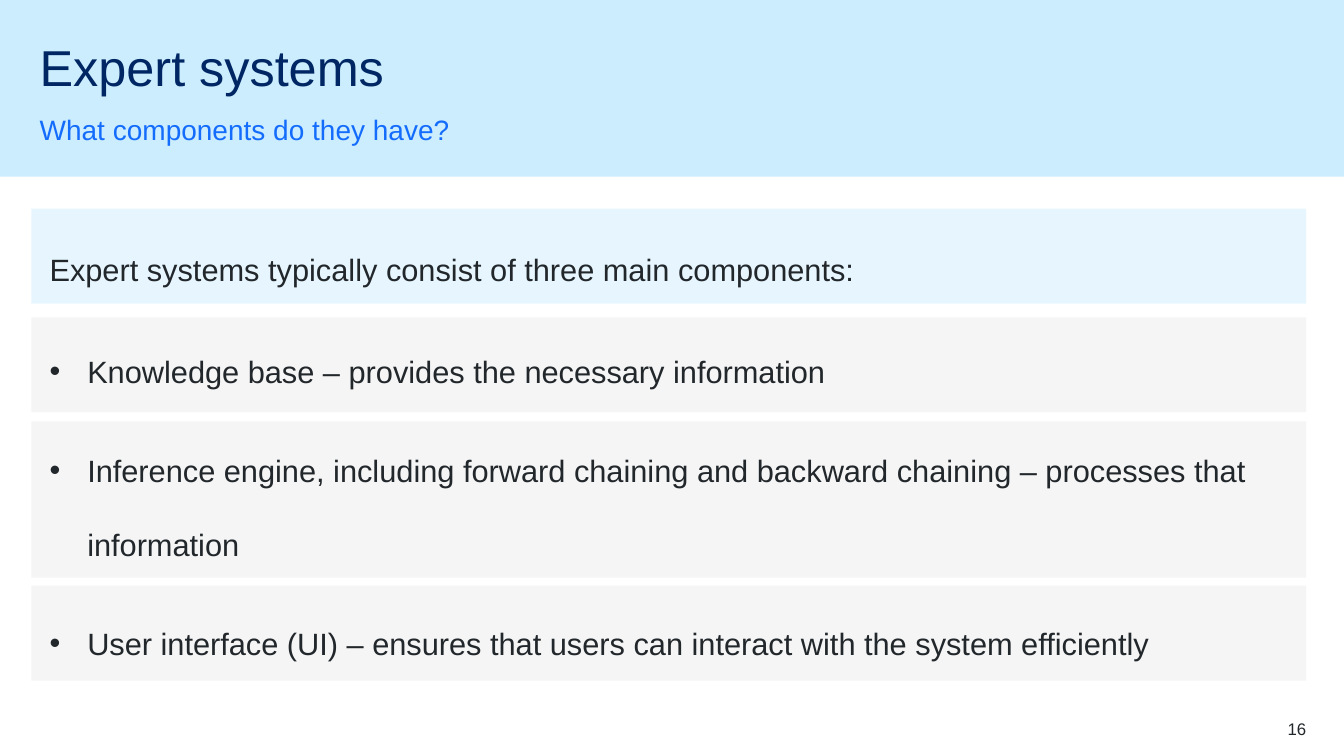
from dataclasses import dataclass

from lxml.etree import SubElement
from pptx import Presentation
from pptx.dml.color import RGBColor
from pptx.enum.shapes import MSO_SHAPE
from pptx.enum.text import MSO_ANCHOR, MSO_AUTO_SIZE, PP_ALIGN
from pptx.oxml.ns import qn
from pptx.util import Cm, Pt

TITLE = "Expert systems"
QUESTION = "What components do they have?"
PAGE = "16"
INTRO = "Expert systems typically consist of three main components:"
COMPONENTS = [
    "Knowledge base – provides the necessary information",
    "Inference engine, including forward chaining and backward chaining – processes that information",
    "User interface (UI) – ensures that users can interact with the system efficiently",
]


@dataclass(frozen=True)
class Theme:
    font: str = "Arial"
    navy: str = "002664"
    blue: str = "146CFD"
    ink: str = "22272B"
    sky: str = "CBEDFD"
    grey: str = "EBEBEB"
    title: int = 36
    question: int = 20
    body: int = 22
    page: int = 12
    panel_opacity: int = 46


THEME = Theme()
WIDTH, HEIGHT = 33.87, 19.05
PANEL_LEFT, PANEL_WIDTH = 0.79, 32.13
PANELS_TOP = 5.26
ROW, TALL_ROW = 2.39, 3.94
PANELS = [
    (THEME.sky, ROW, 0.35),
    (THEME.grey, ROW, 0.23),
    (THEME.grey, TALL_ROW, 0.2),
    (THEME.grey, ROW, 0),
]
INDENT = 0.95


def apply(target, values):
    """Set each named attribute on the target."""
    for name, value in values.items():
        setattr(target, name, value)


def place(shape, box):
    """Move and size a shape, in centimetres."""
    apply(shape, dict(zip(("left", "top", "width", "height"), map(Cm, box))))


def add_panel(slide, box, colour, opacity=100):
    """Draw a plain rectangle."""
    panel = slide.shapes.add_shape(MSO_SHAPE.RECTANGLE, *map(Cm, box))
    panel.shadow.inherit = False
    panel.line.fill.background()
    panel.fill.solid()
    panel.fill.fore_color.rgb = RGBColor.from_string(colour)
    if opacity < 100:
        tint = panel.fill._xPr.find(f".//{qn('a:srgbClr')}")
        SubElement(tint, qn("a:alpha"), val=str(opacity * 1000))


def add_text(slide, box):
    """Add an empty wrapping text box and return its frame."""
    frame = slide.shapes.add_textbox(*map(Cm, box)).text_frame
    frame.word_wrap = True
    return frame


def write(paragraph, text, size, colour, **spacing):
    """Write one formatted run."""
    run = paragraph.add_run()
    run.text = text
    apply(run.font, {"name": THEME.font, "size": Pt(size)})
    run.font.color.rgb = RGBColor.from_string(colour)
    apply(paragraph, spacing)


def add_bullet(paragraph):
    """Give a paragraph a hanging bullet."""
    properties = paragraph._p.get_or_add_pPr()
    properties.set("marL", str(Cm(INDENT)))
    properties.set("indent", str(-Cm(INDENT)))
    SubElement(properties, qn("a:buFont"), typeface=THEME.font)
    SubElement(properties, qn("a:buChar"), char="•")


def main():
    """Build the slide and save it."""
    deck = Presentation()
    apply(deck, {"slide_width": Cm(WIDTH), "slide_height": Cm(HEIGHT)})
    slide = deck.slides.add_slide(deck.slide_layouts[5])
    flush = dict.fromkeys(("margin_left", "margin_top", "margin_right", "margin_bottom"), 0)

    add_panel(slide, (0, 0, WIDTH, 4.45), THEME.sky)
    heading = slide.shapes.title
    slide.shapes._spTree.append(heading._element)
    place(heading, (1, 1, 28.5, 1.45))
    apply(heading.text_frame, {
        **flush, "word_wrap": True,
        "auto_size": MSO_AUTO_SIZE.NONE, "vertical_anchor": MSO_ANCHOR.BOTTOM,
    })
    write(heading.text_frame.paragraphs[0], TITLE, THEME.title, THEME.navy,
          alignment=PP_ALIGN.LEFT, line_spacing=0.9)

    question = add_text(slide, (1, 2.82, 28, 0.86))
    apply(question, {**flush, "vertical_anchor": MSO_ANCHOR.BOTTOM})
    write(question.paragraphs[0], QUESTION, THEME.question, THEME.blue,
          line_spacing=1.5, space_after=Pt(12))

    top = PANELS_TOP
    for colour, height, gap in PANELS:
        add_panel(slide, (PANEL_LEFT, top, PANEL_WIDTH, height), colour, THEME.panel_opacity)
        top += height + gap

    body = add_text(slide, (1, PANELS_TOP, 31.17, 11.3))
    body.auto_size = MSO_AUTO_SIZE.SHAPE_TO_FIT_TEXT
    spacing = {"line_spacing": 2.0, "space_before": Pt(12)}
    write(body.paragraphs[0], INTRO, THEME.body, THEME.ink, space_after=Pt(8), **spacing)
    for component in COMPONENTS:
        item = body.add_paragraph()
        write(item, component, THEME.body, THEME.ink, space_after=Pt(6), **spacing)
        add_bullet(item)

    page = add_text(slide, (30.91, 18.11, 2.01, 0.51))
    apply(page, flush)
    write(page.paragraphs[0], PAGE, THEME.page, THEME.ink, alignment=PP_ALIGN.RIGHT)

    deck.save("out.pptx")


if __name__ == "__main__":
    main()
